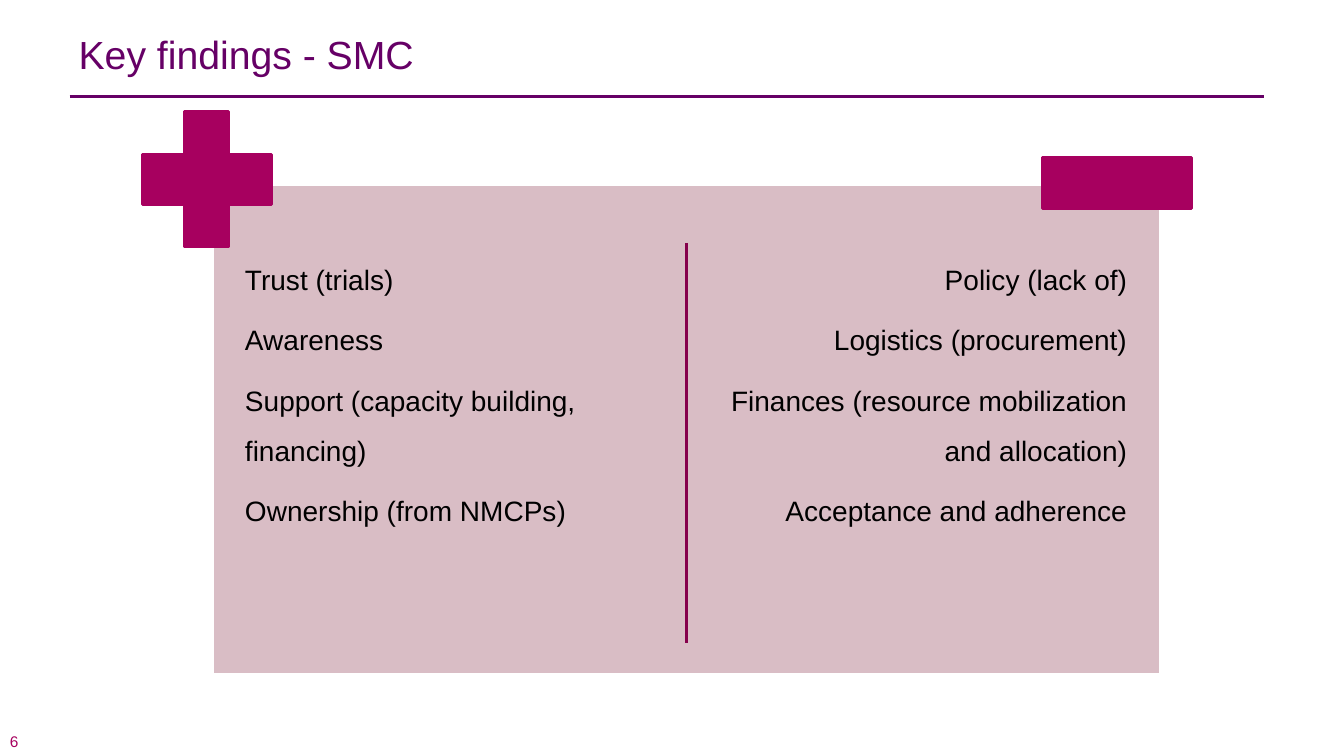
from dataclasses import dataclass

from lxml import etree
from pptx import Presentation
from pptx.dml.color import RGBColor
from pptx.enum.shapes import MSO_CONNECTOR, MSO_SHAPE
from pptx.enum.text import MSO_ANCHOR, MSO_AUTO_SIZE, PP_ALIGN
from pptx.oxml.ns import qn
from pptx.util import Inches, Pt

RECTANGLE, PLUS = MSO_SHAPE.RECTANGLE, MSO_SHAPE.CROSS
STRAIGHT = MSO_CONNECTOR.STRAIGHT
TOP, MIDDLE = MSO_ANCHOR.TOP, MSO_ANCHOR.MIDDLE
LEFT, RIGHT = PP_ALIGN.LEFT, PP_ALIGN.RIGHT
NO_AUTOFIT = MSO_AUTO_SIZE.NONE
TITLE_ONLY = 5


@dataclass(frozen=True)
class Theme:
    font: str = "Arial"
    title: str = "660066"
    accent: str = "A7005F"
    divider: str = "86004C"
    panel: str = "D9BDC5"
    white: str = "FFFFFF"
    black: str = "000000"
    title_size: int = 28
    body_size: int = 20
    number_size: int = 11
    line_width: int = 2


class FindingsSlide:
    """Draws styled elements on one title-only slide."""

    def __init__(self, deck, theme):
        self.theme = theme
        self.page = deck.slides.add_slide(deck.slide_layouts[TITLE_ONLY])

    def fill_text(self, box, lines, size, color, margins, anchor=TOP, **spacing):
        frame = box.text_frame
        side, edge = (Inches(margin) for margin in margins)
        frame_format = {
            "word_wrap": True, "auto_size": NO_AUTOFIT, "vertical_anchor": anchor,
            "margin_left": side, "margin_right": side,
            "margin_top": edge, "margin_bottom": edge,
        }
        for name, value in frame_format.items():
            setattr(frame, name, value)
        for index, line in enumerate(lines):
            para = frame.paragraphs[0] if index == 0 else frame.add_paragraph()
            for name, value in spacing.items():
                setattr(para, name, value)
            span = para.add_run()
            span.text = line
            span.font.name = self.theme.font
            span.font.size = Pt(size)
            span.font.color.rgb = RGBColor.from_string(color)

    def title(self, text, *place):
        box = self.page.shapes.title
        box.left, box.top, box.width, box.height = map(Inches, place)
        self.fill_text(box, [text], self.theme.title_size, self.theme.title,
                       (0.1, 0.05), alignment=LEFT, line_spacing=Pt(26))

    def text(self, lines, place, size, color, margins, **options):
        box = self.page.shapes.add_textbox(*map(Inches, place))
        self.fill_text(box, lines, size, color, margins, **options)

    def shape(self, kind, place, fill, outline):
        shape = self.page.shapes.add_shape(kind, *map(Inches, place))
        shape.shadow.inherit = False
        shape.fill.solid()
        shape.fill.fore_color.rgb = RGBColor.from_string(fill)
        shape.line.color.rgb = RGBColor.from_string(outline)
        shape.line.width = Pt(self.theme.line_width)
        return shape

    def rule(self, ends, color):
        line = self.page.shapes.add_connector(STRAIGHT, *map(Inches, ends))
        line.line.color.rgb = RGBColor.from_string(color)
        line.line.width = Pt(self.theme.line_width)
        etree.SubElement(line._element.spPr, qn("a:effectLst"))


def main():
    theme = Theme()
    deck = Presentation()
    deck.slide_width, deck.slide_height = Inches(13.33), Inches(7.5)
    slide = FindingsSlide(deck, theme)

    slide.text(["6"], (0, 7.26, 1.06, 0.18), theme.number_size, theme.accent,
               (0.1, 0), anchor=MIDDLE)
    slide.title("Key findings - SMC", 0.68, 0.36, 11.87, 0.75)
    slide.rule((0.69, 0.96, 12.54, 0.96), theme.title)
    slide.shape(RECTANGLE, (2.11, 1.83, 9.4, 4.86), theme.panel, theme.white)

    strengths = ["Trust (trials)", "Awareness",
                 "Support (capacity building, financing)",
                 "Ownership (from NMCPs)"]
    barriers = ["Policy (lack of)", "Logistics (procurement)",
                "Finances (resource mobilization and allocation)",
                "Acceptance and adherence"]
    for left, findings, side in ((2.39, strengths, LEFT), (6.85, barriers, RIGHT)):
        slide.text(findings, (left, 2.4, 4.37, 4.16), theme.body_size, theme.black,
                   (0.04, 0.04), alignment=side, line_spacing=1.5, space_after=Pt(7))

    plus = slide.shape(PLUS, (1.41, 1.11, 1.28, 1.34), theme.accent, theme.accent)
    plus.adjustments[0] = 0.33
    slide.shape(RECTANGLE, (10.34, 1.56, 1.48, 0.51), theme.accent, theme.accent)
    slide.rule((6.81, 2.41, 6.81, 6.38), theme.divider)
    deck.save("out.pptx")


if __name__ == "__main__":
    main()
